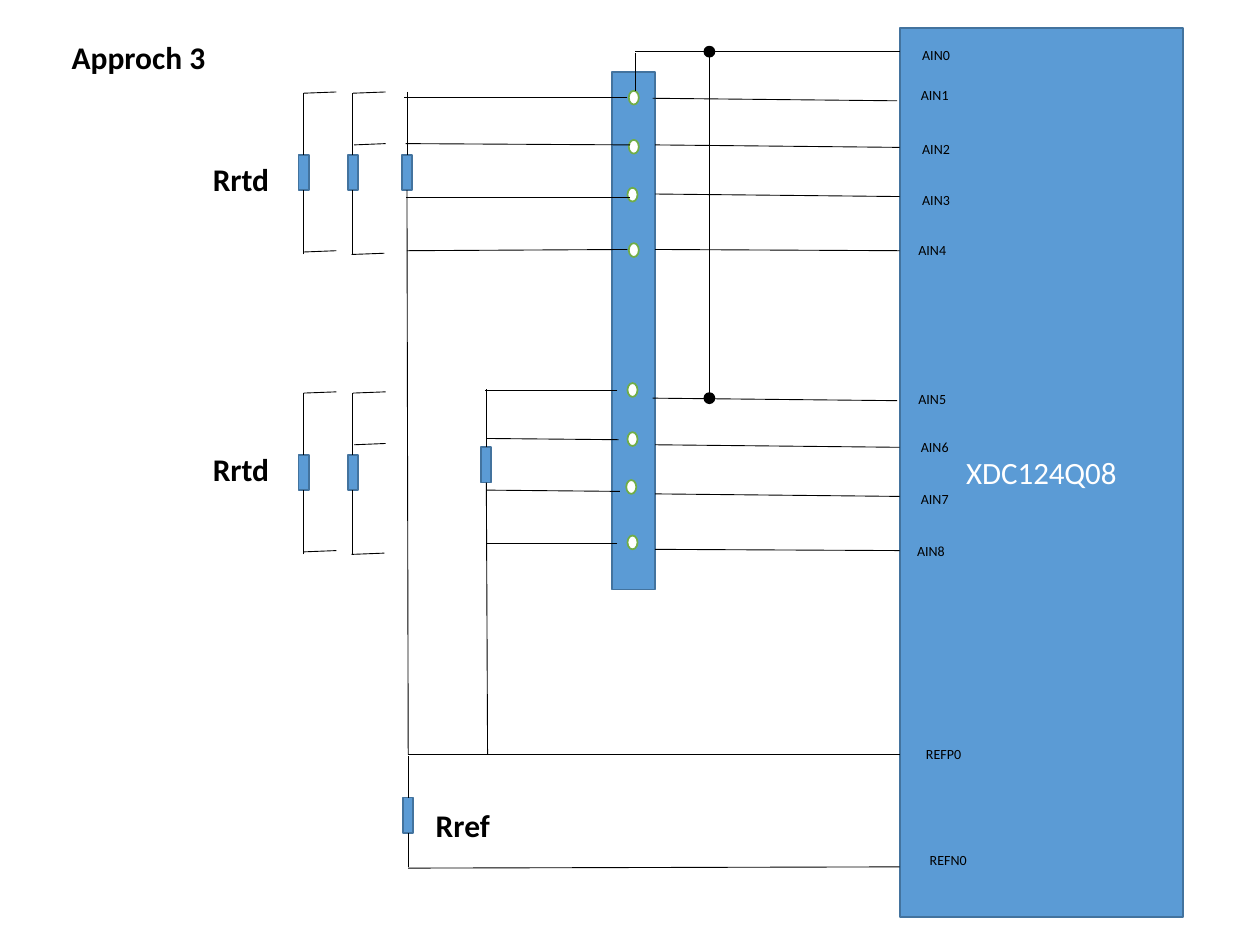
"""Build the wiring diagram of sensor banks, terminal strip and converter."""
from lxml import etree
from pptx import Presentation
from pptx.dml.color import RGBColor
from pptx.enum.shapes import MSO_CONNECTOR, MSO_SHAPE
from pptx.enum.text import MSO_ANCHOR, MSO_AUTO_SIZE, PP_ALIGN
from pptx.oxml.ns import qn
from pptx.util import Inches, Pt

RECTANGLE, OVAL = MSO_SHAPE.RECTANGLE, MSO_SHAPE.OVAL
STRAIGHT = MSO_CONNECTOR.STRAIGHT
MIDDLE, TOP_ANCHOR = MSO_ANCHOR.MIDDLE, MSO_ANCHOR.TOP
CENTER, LEFT = PP_ALIGN.CENTER, PP_ALIGN.LEFT
FIT = MSO_AUTO_SIZE.SHAPE_TO_FIT_TEXT
TOP, BOTTOM = 0, 2

BLUE, BLUE_EDGE, GREEN = "5B9BD5", "43739E", "70AD47"
BLACK, WHITE = "000000", "FFFFFF"

CHIP_NAME = "XDC124Q08"
CHIP = (7.14, 0.22, 2.25, 7.06)
STRIP = (4.86, 0.57, 0.34, 4.11)
RESISTOR_SIZE = (0.08, 0.28)
PIN_SIZE = (0.08, 0.11)
DOT_SIZE = (0.08, 0.08)
BANK_PITCH = 2.38
PIN_PITCH = 2.32

PINS = [(4.99, 0.72), (4.99, 1.11), (4.98, 1.49), (4.99, 1.93)]
CHANNELS = [(5.18, 0.78, 7.12, 0.8), (5.2, 1.15, 7.14, 1.17),
            (5.2, 1.54, 7.14, 1.56), (5.2, 1.98, 7.14, 1.99)]
BANK_WIRES = [(2.79, 2.02, 3.05, 2.01), (2.8, 0.74, 3.06, 0.73),
              (2.81, 1.15, 3.06, 1.14), (2.41, 0.74, 2.67, 0.73),
              (2.41, 2.0, 2.67, 1.99)]
BANK_RESISTORS = [(2.76, 2.8), (2.37, 2.41)]
BANK_TOP, BANK_LEADS = 1.23, (0.74, 2.02)

WIRES = [
    (5.04, 0.41, 7.14, 0.41), (5.04, 0.42, 5.04, 0.72),
    (4.98, 0.77, 3.21, 0.77), (5.0, 1.15, 3.22, 1.14),
    (5.0, 1.57, 3.22, 1.57), (4.98, 1.98, 3.23, 1.99),
    (4.9, 3.1, 3.85, 3.1), (4.91, 3.49, 3.86, 3.48),
    (4.92, 3.9, 3.86, 3.89), (4.9, 4.31, 3.86, 4.31),
    (3.24, 5.99, 7.14, 5.99), (3.24, 6.89, 7.14, 6.88),
    (5.63, 0.4, 5.63, 3.18),
]
RESISTORS = [
    ((3.19, 1.23), (3.23, 0.73), (3.24, 5.99)),
    ((3.82, 3.55), (3.86, 3.09), (3.87, 5.99)),
    ((3.2, 6.33), (3.24, 6.0), (3.24, 6.88)),
]
JUNCTIONS = [(5.59, 0.37), (5.59, 3.12)]
PORT_LABELS = [
    ("AIN0", 7.22, 0.32), ("AIN1", 7.21, 0.64), ("AIN2", 7.22, 1.07),
    ("AIN3", 7.22, 1.47), ("AIN4", 7.19, 1.87), ("AIN5", 7.19, 3.05),
    ("AIN6", 7.21, 3.43), ("AIN7", 7.21, 3.84), ("AIN8", 7.18, 4.26),
    ("REFP0", 7.25, 5.87), ("REFN0", 7.28, 6.71),
]
HEADINGS = [("Rref", 3.36, 6.35, 0.84), ("Rrtd", 1.59, 1.22, 0.78),
            ("Rrtd", 1.59, 3.52, 0.78), ("Approch 3", 0.47, 0.25, 2.37)]


def color(value):
    return RGBColor.from_string(value)


def write(shape, text, size=8, bold=False, ink=BLACK, align=LEFT, anchor=TOP_ANCHOR):
    frame = shape.text_frame
    frame.word_wrap = True
    frame.vertical_anchor = anchor
    paragraph = frame.paragraphs[0]
    paragraph.alignment = align
    run = paragraph.add_run()
    run.text = text
    run.font.name, run.font.size, run.font.bold = "Calibri", Pt(size), bold
    run.font.color.rgb = color(ink)


def add_label(slide, text, left, top, width, height, **style):
    box = slide.shapes.add_textbox(*map(Inches, (left, top, width, height)))
    write(box, text, **style)
    box.text_frame.auto_size = FIT


def add_block(slide, kind, box, fill=BLUE, edge=BLUE_EDGE):
    shape = slide.shapes.add_shape(kind, *map(Inches, box))
    shape.shadow.inherit = False
    shape.fill.solid()
    shape.fill.fore_color.rgb = color(fill)
    shape.line.color.rgb = color(edge)
    shape.line.width = Pt(1)
    return shape


def add_wire(slide, points):
    wire = slide.shapes.add_connector(STRAIGHT, *map(Inches, points))
    wire.line.color.rgb = color(BLACK)
    wire.line.width = Pt(0.5)
    etree.SubElement(wire._element.spPr, qn("a:effectLst"))
    return wire


def add_resistor(slide, corner, upper_end, lower_end):
    resistor = add_block(slide, RECTANGLE, corner + RESISTOR_SIZE)
    for side, end in ((TOP, upper_end), (BOTTOM, lower_end)):
        add_wire(slide, end + corner).end_connect(resistor, side)


def add_bank(slide, shift):
    upper, lower = (y + shift for y in BANK_LEADS)
    for left, lead in BANK_RESISTORS:
        add_resistor(slide, (left, BANK_TOP + shift), (lead, upper), (lead, lower))
    for x1, y1, x2, y2 in BANK_WIRES:
        add_wire(slide, (x1, y1 + shift, x2, y2 + shift))


def main():
    presentation = Presentation()
    presentation.slide_width, presentation.slide_height = Inches(10), Inches(7.5)
    slide = presentation.slides.add_slide(presentation.slide_layouts[6])

    chip = add_block(slide, RECTANGLE, CHIP)
    write(chip, CHIP_NAME, size=17.7, ink=WHITE, align=CENTER, anchor=MIDDLE)
    add_block(slide, RECTANGLE, STRIP)
    for group in range(2):
        for left, top in PINS:
            pin = (left - 0.01 * group, top + PIN_PITCH * group)
            add_block(slide, OVAL, pin + PIN_SIZE, WHITE, GREEN)
    for group in range(2):
        shift = BANK_PITCH * group
        for x1, y1, x2, y2 in CHANNELS:
            add_wire(slide, (x1, y1 + shift, x2, y2 + shift))
        add_bank(slide, shift)
    for resistor in RESISTORS:
        add_resistor(slide, *resistor)
    for wire in WIRES:
        add_wire(slide, wire)
    for junction in JUNCTIONS:
        add_block(slide, OVAL, junction + DOT_SIZE, BLACK, BLACK)
    for text, left, top in PORT_LABELS:
        add_label(slide, text, left, top, 0.62, 0.23)
    for text, left, top, width in HEADINGS:
        add_label(slide, text, left, top, width, 0.4, size=18, bold=True)

    presentation.save("out.pptx")


if __name__ == "__main__":
    main()
